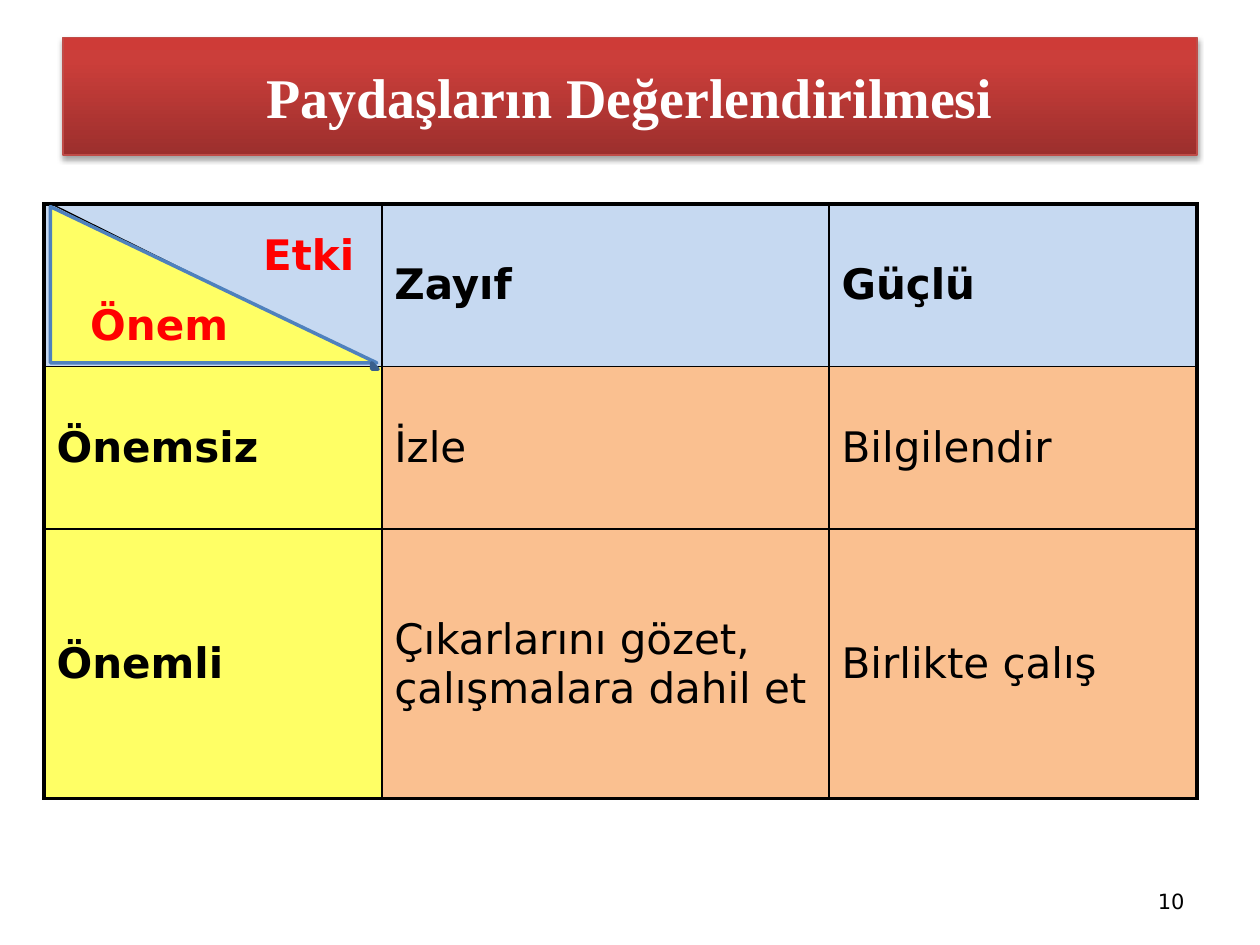
import copy

import pptx
import pptx.dml.color
import pptx.enum.shapes
import pptx.enum.text
import pptx.oxml
import pptx.oxml.ns
import pptx.util
from pptx.util import Inches

HEADING = "Paydaşların Değerlendirilmesi"
IMPACT, IMPORTANCE = "Etki", "Önem"
PAGE = "10"
MATRIX = [
    [IMPACT, "Zayıf", "Güçlü"],
    ["Önemsiz", "İzle", "Bilgilendir"],
    ["Önemli", "Çıkarlarını gözet, çalışmalara dahil et", "Birlikte çalış"],
]
COLUMN_WIDTHS = [2.68, 3.55, 2.92]
ROW_HEIGHTS = [1.29, 1.29, 2.14]
MATRIX_LEFT, MATRIX_TOP = 0.35, 1.62
HEADING_STOPS = [(0, "9C2F2D"), (0.8, "CB3E3A"), (1, "CE3B37")]
BLACK, RED, WHITE = "000000", "FF0000", "FFFFFF"
BLUE, YELLOW, ORANGE = "C6D9F1", "FFFF65", "FAC090"
BODY_FONT = "DejaVu Sans"
ALIGN = pptx.enum.text.PP_ALIGN
MIDDLE = pptx.enum.text.MSO_ANCHOR.MIDDLE
NAMESPACE = pptx.oxml.ns.nsdecls("a")


def color(value):
    return pptx.dml.color.RGBColor.from_string(value)


def write(frame, text, size, ink, bold=False, font=BODY_FONT, align=ALIGN.LEFT):
    paragraph = frame.paragraphs[0]
    paragraph.alignment = align
    run = paragraph.add_run()
    run.text = text
    run.font.size = pptx.util.Pt(size)
    run.font.name = font
    run.font.bold = bold
    run.font.color.rgb = color(ink)
    return paragraph


def outline(shape, ink, width):
    shape.line.color.rgb = color(ink)
    shape.line.width = pptx.util.Pt(width)


def add_heading(slide):
    heading = slide.shapes.title
    heading.left, heading.top = Inches(0.5), Inches(0.3)
    heading.width, heading.height = Inches(9), Inches(0.93)
    heading.fill.gradient()
    heading.fill.gradient_angle = 90
    properties = heading._element.spPr
    stop_list = properties.find(".//" + pptx.oxml.ns.qn("a:gsLst"))
    stop_list.append(copy.deepcopy(stop_list[-1]))
    for stop, (position, ink) in zip(heading.fill.gradient_stops, HEADING_STOPS):
        stop.position = position
        stop.color.rgb = color(ink)
    outline(heading, "BF4C48", 0.75)
    properties.append(pptx.oxml.parse_xml(
        f'<a:effectLst {NAMESPACE}><a:outerShdw blurRad="40000" dist="23000" '
        'dir="5400000" rotWithShape="0"><a:srgbClr val="000000">'
        '<a:alpha val="35000"/></a:srgbClr></a:outerShdw></a:effectLst>'))
    heading.text_frame.vertical_anchor = MIDDLE
    write(heading.text_frame, HEADING, 32, WHITE, True, "Times New Roman", ALIGN.CENTER)


def add_borders(cell, row, column):
    outer = {"L": column == 0, "R": column == len(COLUMN_WIDTHS) - 1,
             "T": row == 0, "B": row == len(ROW_HEIGHTS) - 1}
    properties = cell._tc.get_or_add_tcPr()
    for index, (side, is_outer) in enumerate(outer.items()):
        width = pptx.util.Pt(2.25 if is_outer else 1)
        properties.insert(index, pptx.oxml.parse_xml(
            f'<a:ln{side} {NAMESPACE} w="{width}"><a:solidFill>'
            f'<a:srgbClr val="{BLACK}"/></a:solidFill></a:ln{side}>'))


def add_matrix(slide):
    matrix = slide.shapes.add_table(
        len(ROW_HEIGHTS), len(COLUMN_WIDTHS), Inches(MATRIX_LEFT), Inches(MATRIX_TOP),
        Inches(sum(COLUMN_WIDTHS)), Inches(sum(ROW_HEIGHTS))).table
    matrix.first_row = matrix.horz_banding = False
    for column, width in zip(matrix.columns, COLUMN_WIDTHS):
        column.width = Inches(width)
    for row, height in zip(matrix.rows, ROW_HEIGHTS):
        row.height = Inches(height)
    for r, texts in enumerate(MATRIX):
        for c, text in enumerate(texts):
            cell = matrix.cell(r, c)
            corner = r == c == 0
            cell.fill.solid()
            cell.fill.fore_color.rgb = color(BLUE if r == 0 else YELLOW if c == 0 else ORANGE)
            cell.vertical_anchor = MIDDLE
            if corner:
                cell.margin_right, cell.margin_bottom = Inches(0.22), Inches(0.51)
            paragraph = write(cell.text_frame, text, 24, RED if corner else BLACK,
                              r == 0 or c == 0, align=ALIGN.RIGHT if corner else ALIGN.LEFT)
            paragraph.space_before = pptx.util.Pt(4.8)
            add_borders(cell, r, c)


def add_triangle(slide, left, top, width, height, fill, line):
    triangle = slide.shapes.add_shape(
        pptx.enum.shapes.MSO_SHAPE.RIGHT_TRIANGLE,
        Inches(left), Inches(top), Inches(width), Inches(height))
    triangle.shadow.inherit = False
    triangle.fill.solid()
    triangle.fill.fore_color.rgb = color(fill)
    outline(triangle, line, 2)
    return triangle


def add_corner(slide):
    diagonal = slide.shapes.add_connector(
        pptx.enum.shapes.MSO_CONNECTOR.STRAIGHT,
        Inches(0.41), Inches(MATRIX_TOP), Inches(2.95), Inches(2.88))
    outline(diagonal, BLACK, 0.75)
    diagonal._element.spPr.append(pptx.oxml.parse_xml(f"<a:effectLst {NAMESPACE}/>"))
    importance = add_triangle(slide, 0.4, 1.64, 2.59, 1.24, YELLOW, "4F81BD")
    importance.text_frame.vertical_anchor = MIDDLE
    write(importance.text_frame, IMPORTANCE, 24, RED, True, align=ALIGN.CENTER)
    add_triangle(slide, 2.95, 2.88, 0.05, 0.05, "4F81BD", "3A5F8C")


def add_page_number(slide):
    page = slide.shapes.add_textbox(Inches(7.17), Inches(6.95), Inches(2.33), Inches(0.4))
    page.text_frame.word_wrap = True
    page.text_frame.vertical_anchor = MIDDLE
    write(page.text_frame, PAGE, 12, BLACK, align=ALIGN.RIGHT)


def main():
    """Build the stakeholder evaluation slide."""
    deck = pptx.Presentation()
    deck.slide_width, deck.slide_height = Inches(10), Inches(7.5)
    slide = deck.slides.add_slide(deck.slide_layouts.get_by_name("Title Only"))
    add_page_number(slide)
    add_matrix(slide)
    add_heading(slide)
    add_corner(slide)
    deck.save("out.pptx")


if __name__ == "__main__":
    main()
